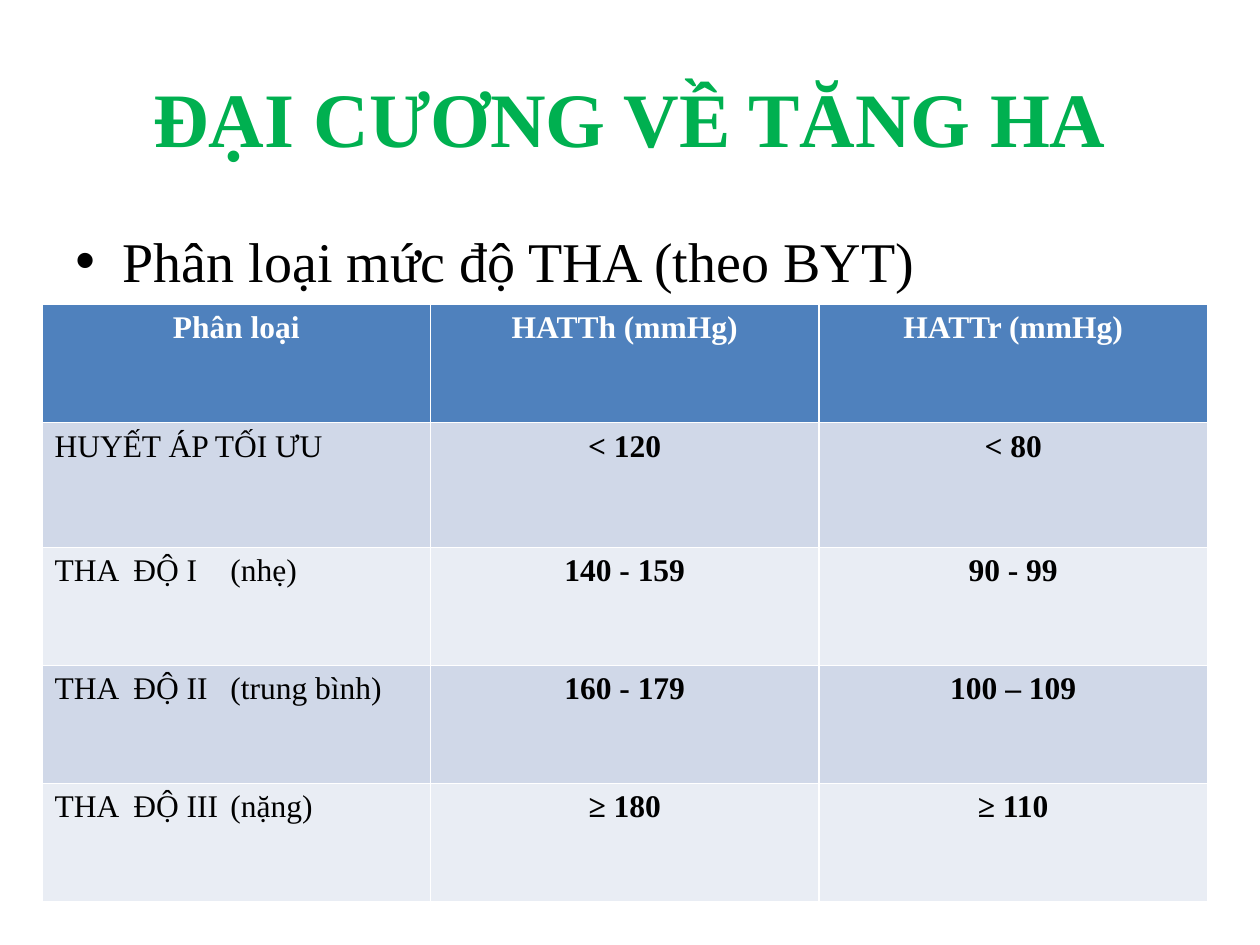
from pptx import Presentation
from pptx import util as u
from pptx.dml.color import RGBColor
from pptx.enum import text
from pptx.oxml.ns import qn
from lxml import etree

FONT = "Times New Roman"
GREEN = RGBColor(0x00, 0xB0, 0x50)
BLACK = RGBColor(0x00, 0x00, 0x00)
WHITE = RGBColor(0xFF, 0xFF, 0xFF)
HEADER_BLUE = RGBColor(0x4F, 0x81, 0xBD)
BANDS = (RGBColor(0xD0, 0xD8, 0xE8), RGBColor(0xE9, 0xED, 0xF4))

ROWS = (
    ("Phân loại", "HATTh (mmHg)", "HATTr (mmHg)"),
    ("HUYẾT ÁP TỐI ƯU", "< 120", "< 80"),
    ("THA\tĐỘ I\t(nhẹ)", "140 - 159", "90 - 99"),
    ("THA\tĐỘ II\t(trung bình)", "160 - 179", "100 – 109"),
    ("THA\tĐỘ III\t(nặng)", "≥ 180", "≥ 110"),
)
ROW_HEIGHTS = (67.5, 71.25, 67.5, 67.5, 67.5)
COLUMN_WIDTH = 222
TAB_STOPS = (45, 100.5)


def format_runs(para, size, color, bold=False):
    for span in para.runs:
        span.font.name = FONT
        span.font.size = u.Pt(size)
        span.font.bold = bold
        span.font.color.rgb = color


def add_title(page, title):
    box = page.shapes.title
    box.left, box.top, box.width, box.height = map(u.Pt, (36, 21.6, 648, 90))
    frame = box.text_frame
    frame.text = title
    frame.vertical_anchor = text.MSO_ANCHOR.MIDDLE
    frame.paragraphs[0].alignment = text.PP_ALIGN.CENTER
    format_runs(frame.paragraphs[0], 44, GREEN, bold=True)


def add_bullet(page, wording):
    box = page.shapes.add_textbox(*map(u.Pt, (36, 126, 648, 356.4)))
    frame = box.text_frame
    frame.word_wrap = True
    frame.text = wording
    para = frame.paragraphs[0]
    properties = para._p.get_or_add_pPr()
    properties.set("marL", str(u.Pt(27)))
    properties.set("indent", str(u.Pt(-27)))
    etree.SubElement(properties, qn("a:buFont"), typeface="Arial")
    etree.SubElement(properties, qn("a:buChar"), char="•")
    format_runs(para, 32, BLACK)


def add_tab_stops(para):
    stops = etree.SubElement(para._p.get_or_add_pPr(), qn("a:tabLst"))
    for position in TAB_STOPS:
        etree.SubElement(stops, qn("a:tab"), pos=str(u.Pt(position)), algn="l")


def fill_cell(cell, wording, fill, color, bold, centred):
    cell.fill.solid()
    cell.fill.fore_color.rgb = fill
    cell.text_frame.text = wording
    para = cell.text_frame.paragraphs[0]
    if "\t" in wording:
        add_tab_stops(para)
    para.alignment = text.PP_ALIGN.CENTER if centred else text.PP_ALIGN.LEFT
    format_runs(para, 18, color, bold)


def add_grades_table(page):
    columns = len(ROWS[0])
    frame = page.shapes.add_table(
        len(ROWS), columns, u.Pt(24), u.Pt(174),
        u.Pt(COLUMN_WIDTH * columns), u.Pt(sum(ROW_HEIGHTS)))
    table = frame.table
    for column in table.columns:
        column.width = u.Pt(COLUMN_WIDTH)
    for r, (wordings, height) in enumerate(zip(ROWS, ROW_HEIGHTS)):
        table.rows[r].height = u.Pt(height)
        header = r == 0
        fill = HEADER_BLUE if header else BANDS[(r - 1) % 2]
        color = WHITE if header else BLACK
        for c, wording in enumerate(wordings):
            emphasised = header or c > 0
            fill_cell(table.cell(r, c), wording, fill, color,
                      bold=emphasised, centred=emphasised)


def main():
    deck = Presentation()
    deck.slide_width, deck.slide_height = u.Pt(720), u.Pt(540)
    page = deck.slides.add_slide(deck.slide_layouts.get_by_name("Title Only"))
    add_title(page, "ĐẠI CƯƠNG VỀ TĂNG HA")
    add_bullet(page, "Phân loại mức độ THA (theo BYT)")
    add_grades_table(page)
    deck.save("out.pptx")


if __name__ == "__main__":
    main()
